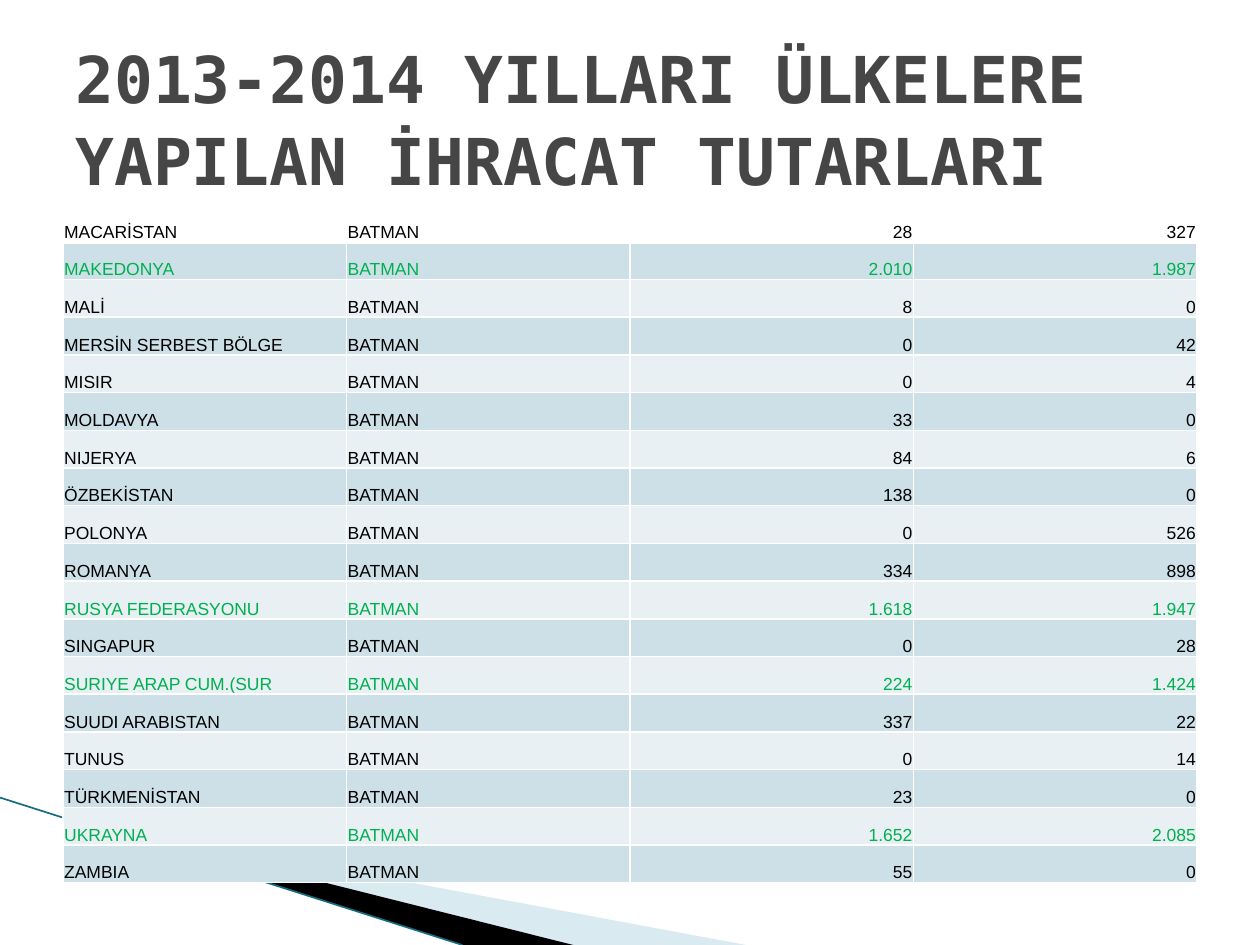
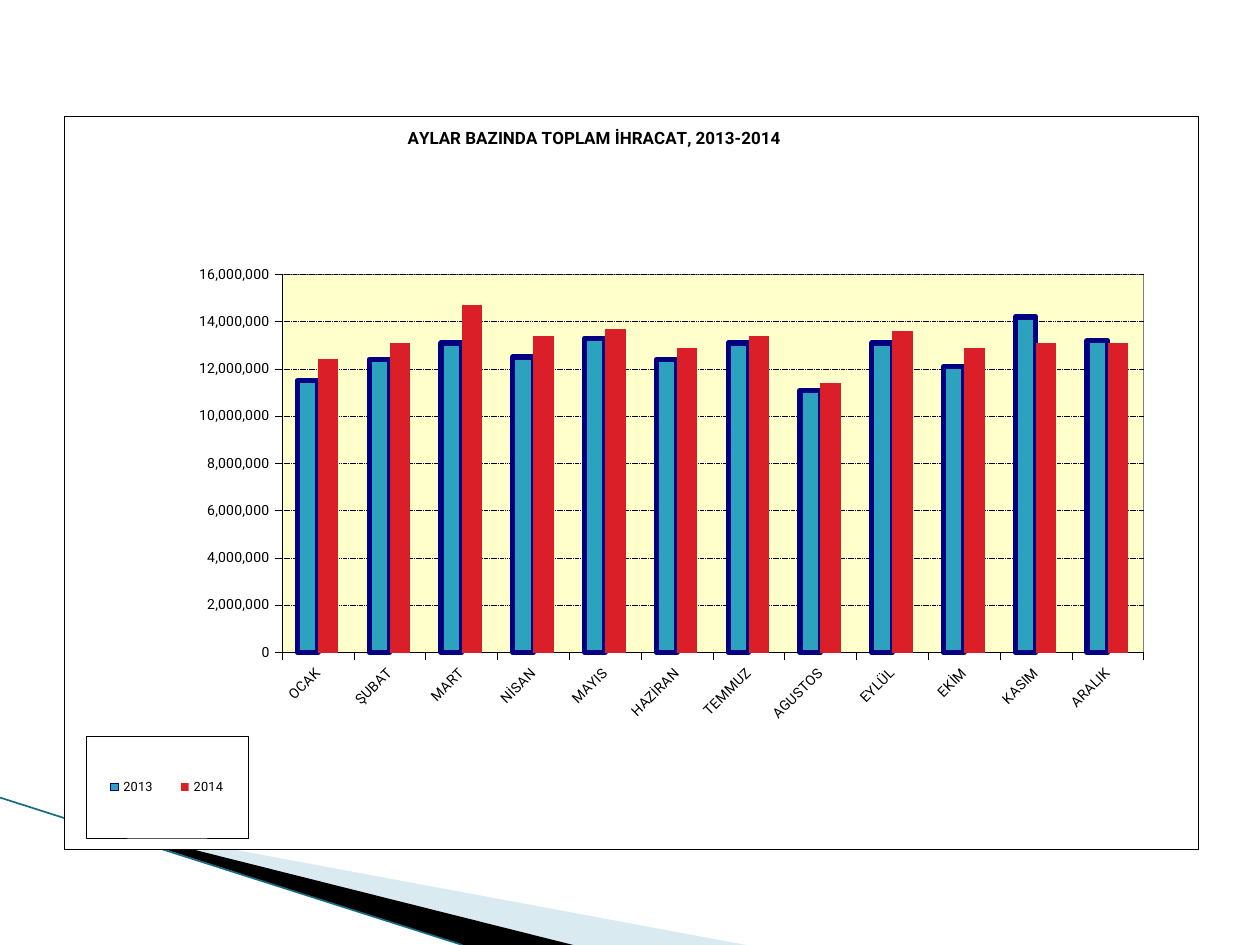
import itertools
from dataclasses import dataclass

import pptx
import pptx.chart.data
import pptx.dml.color
import pptx.enum.chart
import pptx.enum.dml
import pptx.enum.shapes
import pptx.enum.text
import pptx.oxml
import pptx.oxml.ns
import pptx.util

COLORS = {
    "white": "FFFFFF", "black": "000000", "title": "464646",
    "band": "A0CBDC", "edge": "166C82",
    "row_dark": "CDE0E8", "row_light": "E8F0F4", "highlight": "00B050",
    "plot": "FFFFCC", "plot_edge": "808080",
    "y2013": "2DA2BF", "y2013_edge": "000080", "y2014": "DA1F28",
}
TITLE_FONT, TABLE_FONT, CHART_FONT = "DejaVu Sans Mono", "Arial", "Roboto"
CHART_NS = pptx.oxml.ns.nsdecls("c", "a")

# The slide is a grid of 100 columns by 75 rows.
WIDTH, HEIGHT = pptx.util.Inches(10), pptx.util.Inches(7.5)
COL, ROW = WIDTH / 100, HEIGHT / 75


@dataclass(frozen=True)
class Box:
    x: float
    y: float
    w: float
    h: float

    def emu(self) -> tuple[int, int, int, int]:
        return (int(self.x * COL), int(self.y * ROW),
                int(self.w * COL), int(self.h * ROW))


@dataclass(frozen=True)
class Wedge:
    points: tuple[tuple[float, float], ...]
    color: str
    opacity: int


@dataclass(frozen=True)
class Export:
    country: str
    y2013: str
    y2014: str
    highlight: bool = False

    def cells(self) -> tuple[str, ...]:
        return self.country, "BATMAN", self.y2013, self.y2014


@dataclass(frozen=True)
class Series:
    name: str
    millions: tuple[float, ...]
    color: str
    edge: str | None = None


WEDGES = (
    Wedge(((5.5, 65), (59.2, 75), (45.4, 75)), "band", 40),
    Wedge(((5.3, 64.9), (45.5, 75), (36.7, 75)), "black", 100),
)
TITLE_BOX = Box(5, 3, 90, 12.5)
TABLE_BOX = Box(5, 16.2, 90, 53.9)
CHART_BOX = Box(5.1, 9.2, 90, 58.2)

EXPORTS = (
    Export("MACARİSTAN", "28", "327"),
    Export("MAKEDONYA", "2.010", "1.987", True),
    Export("MALİ", "8", "0"),
    Export("MERSİN SERBEST BÖLGE", "0", "42"),
    Export("MISIR", "0", "4"),
    Export("MOLDAVYA", "33", "0"),
    Export("NIJERYA", "84", "6"),
    Export("ÖZBEKİSTAN", "138", "0"),
    Export("POLONYA", "0", "526"),
    Export("ROMANYA", "334", "898"),
    Export("RUSYA FEDERASYONU", "1.618", "1.947", True),
    Export("SINGAPUR", "0", "28"),
    Export("SURIYE ARAP CUM.(SUR", "224", "1.424", True),
    Export("SUUDI ARABISTAN", "337", "22"),
    Export("TUNUS", "0", "14"),
    Export("TÜRKMENİSTAN", "23", "0"),
    Export("UKRAYNA", "1.652", "2.085", True),
    Export("ZAMBIA", "55", "0"),
)
MONTHS = ("OCAK", "ŞUBAT", "MART", "NİSAN", "MAYIS", "HAZİRAN", "TEMMUZ",
          "AGUSTOS", "EYLÜL", "EKİM", "KASIM", "ARALIK")
SERIES = (
    Series("2013", (11.5, 12.4, 13.1, 12.5, 13.3, 12.4, 13.1, 11.1, 13.1,
                    12.1, 14.2, 13.2), "y2013", "y2013_edge"),
    Series("2014", (12.4, 13.1, 14.7, 13.4, 13.7, 12.9, 13.4, 11.4, 13.6,
                    12.9, 13.1, 13.1), "y2014"),
)


def rgb(name: str) -> pptx.dml.color.RGBColor:
    return pptx.dml.color.RGBColor.from_string(COLORS[name])


def set_fill(fill, color: str) -> None:
    fill.solid()
    fill.fore_color.rgb = rgb(color)


def set_line(line, color: str, width: float) -> None:
    line.color.rgb = rgb(color)
    line.width = pptx.util.Pt(width)


def set_font(font, name: str, size: float, color: str, bold: bool = False) -> None:
    font.name, font.size, font.bold = name, pptx.util.Pt(size), bold
    font.color.rgb = rgb(color)


def add_wedge(s, wedge: Wedge) -> None:
    points = [(x * COL, y * ROW) for x, y in wedge.points]
    builder = s.shapes.build_freeform(*points[0])
    builder.add_line_segments(points[1:], close=True)
    sp = builder.convert_to_shape()
    sp.shadow.inherit = False
    set_fill(sp.fill, wedge.color)
    sp.line.fill.background()
    if wedge.opacity < 100:
        color = sp.fill._xPr.find(".//" + pptx.oxml.ns.qn("a:srgbClr"))
        color.append(pptx.oxml.parse_xml(
            f'<a:alpha {pptx.oxml.ns.nsdecls("a")} val="{wedge.opacity * 1000}"/>'))


def add_slide(prs):
    """Add a blank slide with the corner decoration."""
    s = prs.slides.add_slide(prs.slide_layouts[6])
    set_fill(s.background.fill, "white")
    for wedge in WEDGES:
        add_wedge(s, wedge)
    edge = s.shapes.add_connector(
        pptx.enum.shapes.MSO_CONNECTOR.STRAIGHT,
        0, int(63.3 * ROW), int(36.7 * COL), HEIGHT)
    set_line(edge.line, "edge", 0.95)
    edge._element.spPr.append(pptx.oxml.parse_xml(
        f'<a:effectLst {pptx.oxml.ns.nsdecls("a")}/>'))
    return s


def add_title(s, text: str) -> None:
    tf = s.shapes.add_textbox(*TITLE_BOX.emu()).text_frame
    tf.word_wrap = True
    tf.vertical_anchor = pptx.enum.text.MSO_ANCHOR.MIDDLE
    tf.text = text
    p = tf.paragraphs[0]
    p.line_spacing = 1.05
    set_font(p.runs[0].font, TITLE_FONT, 36.9, "title", bold=True)


def set_borders(cell, top: float, bottom: float) -> None:
    tc_pr = cell._tc.get_or_add_tcPr()
    for side, width in (("L", 1), ("R", 1), ("T", top), ("B", bottom)):
        tc_pr.append(pptx.oxml.parse_xml(
            f'<a:ln{side} {pptx.oxml.ns.nsdecls("a")} w="{pptx.util.Pt(width)}">'
            f'<a:solidFill><a:srgbClr val="{COLORS["white"]}"/></a:solidFill>'
            f'</a:ln{side}>'))


def add_export_table(s) -> None:
    rows, cols = len(EXPORTS), len(EXPORTS[0].cells())
    table = s.shapes.add_table(rows, cols, *TABLE_BOX.emu()).table
    table.first_row = table.horz_banding = False
    for row in table.rows:
        row.height = int(TABLE_BOX.h * ROW / rows)
    for i, j in itertools.product(range(rows), range(cols)):
        export, cell = EXPORTS[i], table.cell(i, j)
        set_borders(cell, top=3 if i == 1 else 1, bottom=3 if i == 0 else 1)
        if i == 0:
            cell.fill.background()
        else:
            set_fill(cell.fill, "row_dark" if i % 2 else "row_light")
        cell.margin_left = cell.margin_right = cell.margin_top = pptx.util.Inches(0.01)
        cell.margin_bottom = 0
        cell.vertical_anchor = pptx.enum.text.MSO_ANCHOR.BOTTOM
        cell.text_frame.text = export.cells()[j]
        p = cell.text_frame.paragraphs[0]
        if j >= 2:
            p.alignment = pptx.enum.text.PP_ALIGN.RIGHT
        set_font(p.runs[0].font, TABLE_FONT, 10,
                 "highlight" if export.highlight else "black")


def chart_layout(place: dict[str, float], inner: bool = False):
    """Make a manual layout from percentages of the chart's size."""
    target = '<c:layoutTarget val="inner"/>' if inner else ""
    modes = '<c:xMode val="edge"/><c:yMode val="edge"/>'
    values = "".join(f'<c:{k} val="{v / 100:.3f}"/>' for k, v in place.items())
    return pptx.oxml.parse_xml(
        f'<c:layout {CHART_NS}><c:manualLayout>{target}{modes}{values}'
        '</c:manualLayout></c:layout>')


def place_part(part, after: str | None, layout) -> None:
    """Put a layout into a chart part, behind the named child or first."""
    for old in part.findall(pptx.oxml.ns.qn("c:layout")):
        part.remove(old)
    if after:
        part.find(pptx.oxml.ns.qn(after)).addnext(layout)
    else:
        part.insert(0, layout)


def frame_xml(fill: str, edge: str):
    return pptx.oxml.parse_xml(
        f'<c:spPr {CHART_NS}><a:solidFill><a:srgbClr val="{COLORS[fill]}"/></a:solidFill>'
        f'<a:ln w="{pptx.util.Pt(0.25)}"><a:solidFill><a:srgbClr val="{COLORS[edge]}"/>'
        '</a:solidFill></a:ln></c:spPr>')


def style_axes(chart) -> None:
    for axis in (chart.category_axis, chart.value_axis):
        axis.major_tick_mark = pptx.enum.chart.XL_TICK_MARK.OUTSIDE
        axis.minor_tick_mark = pptx.enum.chart.XL_TICK_MARK.NONE
        set_line(axis.format.line, "black", 0.25)
        set_font(axis.tick_labels.font, CHART_FONT, 8, "black")
    chart.category_axis._element.txPr.bodyPr.set("rot", str(-45 * 60000))
    values = chart.value_axis
    values.minimum_scale, values.maximum_scale, values.major_unit = 0, 16e6, 2e6
    values.tick_labels.number_format = "#,##0"
    values.tick_labels.number_format_is_linked = False
    values.has_major_gridlines = True
    grid = values.major_gridlines.format.line
    set_line(grid, "black", 0.25)
    grid.dash_style = pptx.enum.dml.MSO_LINE.SQUARE_DOT


def add_export_chart(s) -> None:
    data = pptx.chart.data.CategoryChartData(number_format="#,##0")
    data.categories = MONTHS
    for series in SERIES:
        data.add_series(series.name, [round(m * 1e6) for m in series.millions])
    chart = s.shapes.add_chart(
        pptx.enum.chart.XL_CHART_TYPE.COLUMN_CLUSTERED, *CHART_BOX.emu(), data).chart
    set_font(chart.font, CHART_FONT, 8, "black")
    style_axes(chart)

    plot = chart.plots[0]
    plot.gap_width, plot.overlap, plot.vary_by_categories = 150, 0, False
    for bars, series in zip(plot.series, SERIES):
        set_fill(bars.format.fill, series.color)
        if series.edge:
            set_line(bars.format.line, series.edge, 3)
        else:
            bars.format.line.fill.background()

    title = chart.chart_title
    title.text_frame.text = "AYLAR BAZINDA TOPLAM İHRACAT, 2013-2014"
    set_font(title.text_frame.paragraphs[0].runs[0].font, CHART_FONT, 9.7, "black", True)
    place_part(title._element, "c:tx", chart_layout({"x": 30, "y": 1}))

    chart.has_legend = True
    legend = chart.legend
    legend.position = pptx.enum.chart.XL_LEGEND_POSITION.RIGHT
    legend.include_in_layout = False
    set_font(legend.font, CHART_FONT, 7.3, "black")
    place_part(legend._element, "c:legendPos",
               chart_layout({"x": 1.9, "y": 84.6, "w": 14.3, "h": 13.9}))
    legend._element.find(pptx.oxml.ns.qn("c:overlay")).addnext(frame_xml("white", "black"))

    space = chart._chartSpace
    area = space.chart.plotArea
    place_part(area, None,
               chart_layout({"x": 19.2, "y": 21.6, "w": 76, "h": 51.6}, inner=True))
    area.append(frame_xml("plot", "plot_edge"))
    space.chart.addnext(frame_xml("white", "black"))


def main() -> None:
    prs = pptx.Presentation()
    prs.slide_width, prs.slide_height = WIDTH, HEIGHT
    s = add_slide(prs)
    add_export_table(s)
    add_title(s, "2013-2014 YILLARI ÜLKELERE YAPILAN İHRACAT TUTARLARI")
    add_export_chart(add_slide(prs))
    prs.save("out.pptx")


if __name__ == "__main__":
    main()
